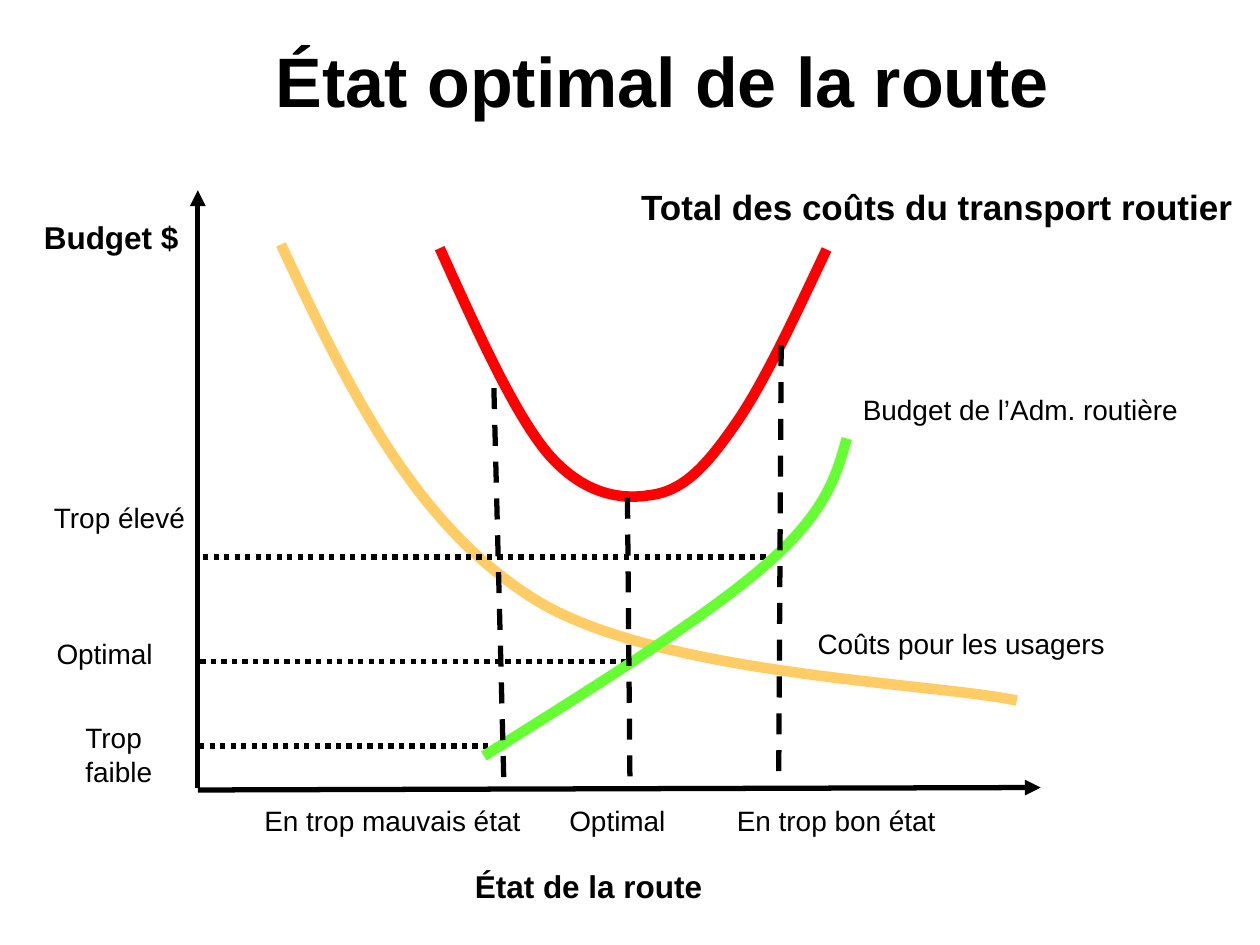
from dataclasses import dataclass

from lxml import etree
from pptx import Presentation
from pptx.dml.color import RGBColor
from pptx.enum.dml import MSO_LINE
from pptx.enum.shapes import MSO_CONNECTOR
from pptx.enum.text import MSO_ANCHOR, MSO_AUTO_SIZE, PP_ALIGN
from pptx.oxml.ns import qn
from pptx.util import Inches, Pt

STRAIGHT = MSO_CONNECTOR.STRAIGHT
DOTTED = MSO_LINE.ROUND_DOT
DASHED = MSO_LINE.DASH
TOP = MSO_ANCHOR.TOP
LEFT = PP_ALIGN.LEFT
GROW = MSO_AUTO_SIZE.SHAPE_TO_FIT_TEXT
TITLE_ONLY = 5


@dataclass(frozen=True)
class Theme:
    font: str = "Arial"
    ink: str = "000000"
    user_costs: str = "FFCC66"
    total_costs: str = "FF0000"
    road_budget: str = "66FF33"
    title_size: int = 40
    heading_size: int = 20
    axis_size: int = 18
    label_size: int = 16
    line_width: int = 3
    curve_width: int = 6


THEME = Theme()

USER_COSTS = [(2.23, 1.94), (2.75, 3.05), (3.28, 4.16), (4.25, 4.76),
              (5.22, 5.36), (7.43, 5.42), (8.07, 5.56)]
TOTAL_COSTS = [(3.49, 1.97), (3.78, 2.61), (4.07, 3.26), (4.34, 3.59),
               (4.62, 3.92), (4.92, 3.97), (5.16, 3.93),
               (5.41, 3.9), (5.59, 3.72), (5.82, 3.39),
               (6.05, 3.07), (6.3, 2.53), (6.56, 1.98)]
ROAD_BUDGET = [(3.84, 6), (4.72, 5.45), (5.6, 4.9), (6.08, 4.48),
               (6.56, 4.06), (6.64, 3.77), (6.72, 3.48)]

AXES = [((1.57, 6.25), (1.57, 1.51)), ((1.57, 6.27), (8.26, 6.25))]
BUDGET_LEVELS = [((6.16, 4.42), (1.56, 4.42)), ((1.59, 5.25), (5, 5.25)),
                 ((1.58, 5.92), (4, 5.92))]
ROAD_STATES = [((3.92, 3.08), (4, 6.25)), ((6.2, 2.74), (6.18, 6.25)),
               ((4.98, 3.95), (5, 6.25))]

LABELS = [
    ("Budget de l’Adm. routière", (6.75, 3.07, 2.83, 0.37), True),
    ("Coûts pour les usagers", (6.39, 4.92, 2.51, 0.37), False),
    ("Trop élevé", (0.33, 3.92, 1.25, 0.37), False),
    ("Optimal", (0.35, 5, 0.98, 0.37), False),
    ("Trop faible", (0.58, 5.67, 1.08, 0.64), True),
    ("En trop mauvais état", (2, 6.33, 2.26, 0.37), False),
    ("Optimal", (4.42, 6.33, 0.98, 0.37), False),
    ("En trop bon état", (5.75, 6.33, 1.8, 0.37), False),
]


def write_text(shape, text, size=THEME.label_size, bold=False, wrap=False):
    frame = shape.text_frame
    frame.text = text
    frame.word_wrap = wrap
    frame.auto_size = GROW
    frame.vertical_anchor = TOP
    paragraph = frame.paragraphs[0]
    paragraph.alignment = LEFT
    font = paragraph.runs[0].font
    font.name = THEME.font
    font.size = Pt(size)
    font.bold = bold
    font.color.rgb = RGBColor.from_string(THEME.ink)


def add_label(slide, text, box, **text_format):
    shape = slide.shapes.add_textbox(*map(Inches, box))
    write_text(shape, text, **text_format)


def add_title(slide, text, box):
    title = slide.shapes.title
    title.left, title.top, title.width, title.height = map(Inches, box)
    write_text(title, text, size=THEME.title_size, bold=True)


def format_line(line, color, width):
    line.color.rgb = RGBColor.from_string(color)
    line.width = Pt(width)


def add_line(slide, start, end, dash=None, arrow=False):
    connector = slide.shapes.add_connector(STRAIGHT, *map(Inches, start + end))
    format_line(connector.line, THEME.ink, THEME.line_width)
    if dash:
        connector.line.dash_style = dash
    properties = connector._element.spPr
    if arrow:
        etree.SubElement(properties.find(qn("a:ln")), qn("a:tailEnd"), type="triangle")
    etree.SubElement(properties, qn("a:effectLst"))


def add_curve(slide, points, color):
    start, *controls = [(Inches(x), Inches(y)) for x, y in points]
    builder = slide.shapes.build_freeform(*start)
    builder.add_line_segments(controls, close=False)
    shape = builder.convert_to_shape()
    shape.shadow.inherit = False
    shape.fill.background()
    format_line(shape.line, color, THEME.curve_width)
    segments = list(shape._element.iter(qn("a:lnTo")))
    for index in range(0, len(segments), 3):
        first, *others = segments[index:index + 3]
        first.tag = qn("a:cubicBezTo")
        for segment in others:
            first.append(segment[0])
            segment.getparent().remove(segment)


def main():
    presentation = Presentation()
    presentation.slide_width = Inches(10)
    presentation.slide_height = Inches(7.5)
    slide = presentation.slides.add_slide(presentation.slide_layouts[TITLE_ONLY])

    add_title(slide, "État optimal de la route", (2.09, 0.25, 6.41, 0.77))
    for start, end in AXES:
        add_line(slide, start, end, arrow=True)
    add_curve(slide, USER_COSTS, THEME.user_costs)
    add_curve(slide, TOTAL_COSTS, THEME.total_costs)
    for start, end in BUDGET_LEVELS:
        add_line(slide, start, end, dash=DOTTED)
    add_curve(slide, ROAD_BUDGET, THEME.road_budget)
    for start, end in ROAD_STATES:
        add_line(slide, start, end, dash=DASHED)

    add_label(slide, "Total des coûts du transport routier", (4.99, 1.42, 5.01, 0.44),
              size=THEME.heading_size, bold=True)
    add_label(slide, "Budget $", (0.25, 1.68, 1.5, 0.44),
              size=THEME.axis_size, bold=True, wrap=True)
    add_label(slide, "État de la route", (3.67, 6.83, 2.92, 0.4),
              size=THEME.axis_size, bold=True, wrap=True)
    for text, box, wrap in LABELS:
        add_label(slide, text, box, wrap=wrap)

    presentation.save("out.pptx")


if __name__ == "__main__":
    main()
